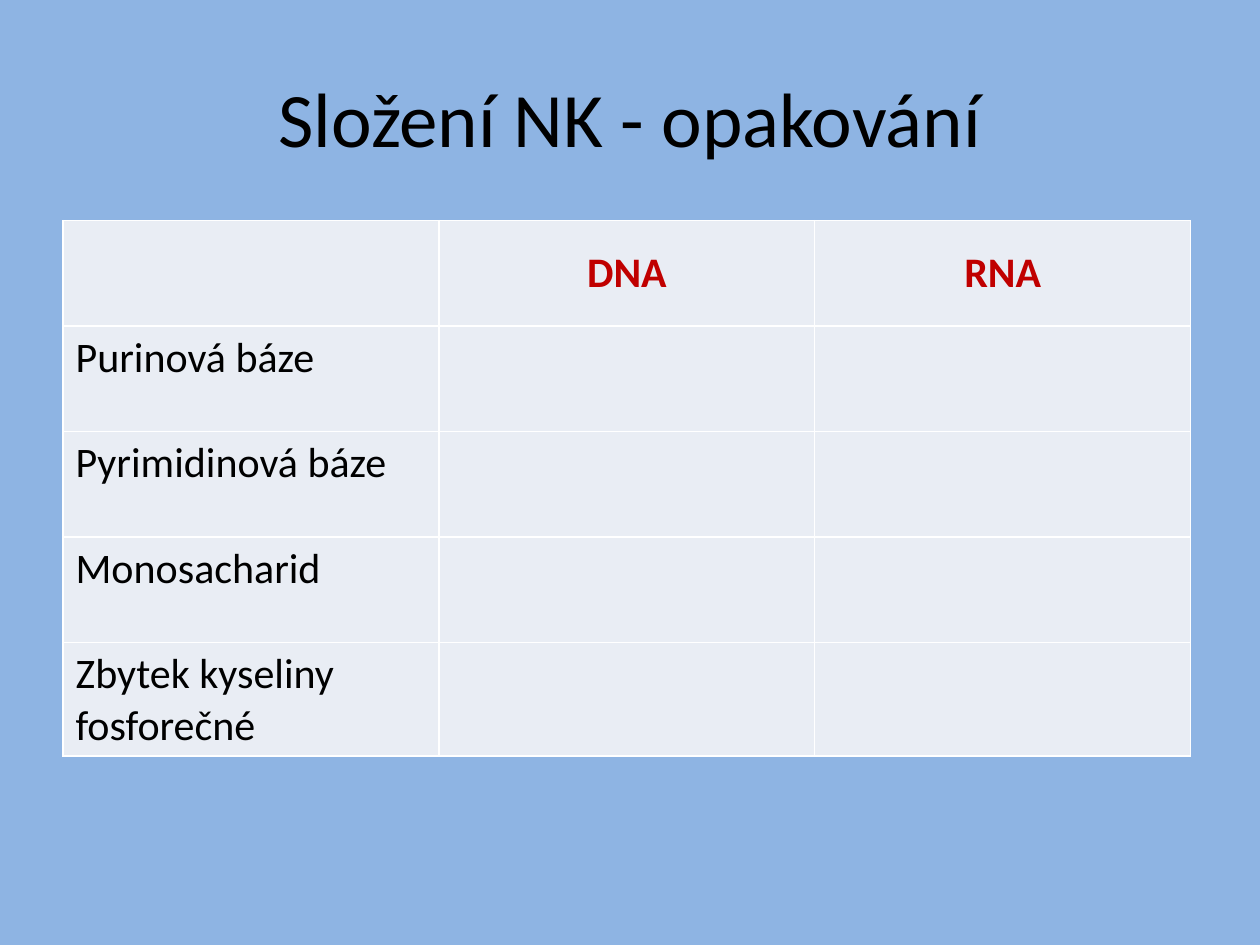
from lxml import etree
from pptx import Presentation
from pptx.dml.color import RGBColor
from pptx.enum.text import MSO_ANCHOR, PP_ALIGN
from pptx.oxml.ns import qn
from pptx.util import Inches, Pt

SKY = RGBColor(0x8E, 0xB4, 0xE3)
PALE = RGBColor(0xE9, 0xED, 0xF4)
WHITE = RGBColor(0xFF, 0xFF, 0xFF)
BLACK = RGBColor(0x00, 0x00, 0x00)
RED = RGBColor(0xC0, 0x00, 0x00)
MIDDLE, TOP = MSO_ANCHOR.MIDDLE, MSO_ANCHOR.TOP
CENTER, LEFT = PP_ALIGN.CENTER, PP_ALIGN.LEFT
FONT = "Calibri"

ROWS = [
    ("", "DNA", "RNA"),
    ("Purinová báze", "", ""),
    ("Pyrimidinová báze", "", ""),
    ("Monosacharid", "", ""),
    ("Zbytek kyseliny fosforečné", "", ""),
]


def write(frame, text, size, color, align, bold=False):
    """Put one formatted paragraph into a text frame."""
    frame.text = text
    para = frame.paragraphs[0]
    para.alignment = align
    for font in [para.font] + [span.font for span in para.runs]:
        font.name = FONT
        font.size = Pt(size)
        font.bold = bold
        font.color.rgb = color


def add_borders(cell, color, width):
    """Draw a solid line on all four sides of a cell."""
    properties = cell._tc.get_or_add_tcPr()
    for side in ("a:lnL", "a:lnR", "a:lnT", "a:lnB"):
        line = etree.SubElement(properties, qn(side), w=str(Pt(width)))
        fill = etree.SubElement(line, qn("a:solidFill"))
        etree.SubElement(fill, qn("a:srgbClr"), val=str(color))


def add_title(page, left, top, width, height):
    """Place the centred heading in the given box."""
    box = page.shapes.add_textbox(left, top, width, height)
    frame = box.text_frame
    frame.word_wrap = True
    frame.vertical_anchor = MIDDLE
    write(frame, "Složení NK - opakování", 44, BLACK, CENTER)


def add_comparison(page, left, top, width, height):
    """Place the table of DNA and RNA components in the given box."""
    table = page.shapes.add_table(
        len(ROWS), len(ROWS[0]), left, top, width, height
    ).table
    table.first_row = False
    table.horz_banding = False
    for row_index, row in enumerate(ROWS):
        heading = row_index == 0
        for column_index, text in enumerate(row):
            cell = table.cell(row_index, column_index)
            add_borders(cell, WHITE, 1)
            cell.fill.solid()
            cell.fill.fore_color.rgb = PALE
            cell.vertical_anchor = MIDDLE if heading else TOP
            write(cell.text_frame, text, 24, RED if heading else BLACK,
                  CENTER if heading else LEFT, heading)


def main():
    """Build the slide and save the deck."""
    deck = Presentation()
    deck.slide_width, deck.slide_height = Inches(10), Inches(7.5)
    page = deck.slides.add_slide(deck.slide_layouts[6])
    page.background.fill.solid()
    page.background.fill.fore_color.rgb = SKY
    add_title(page, Inches(0.5), Inches(0.3), Inches(9), Inches(1.25))
    add_comparison(page, Inches(0.5), Inches(1.75), Inches(8.95), Inches(4.19))
    deck.save("out.pptx")


if __name__ == "__main__":
    main()
